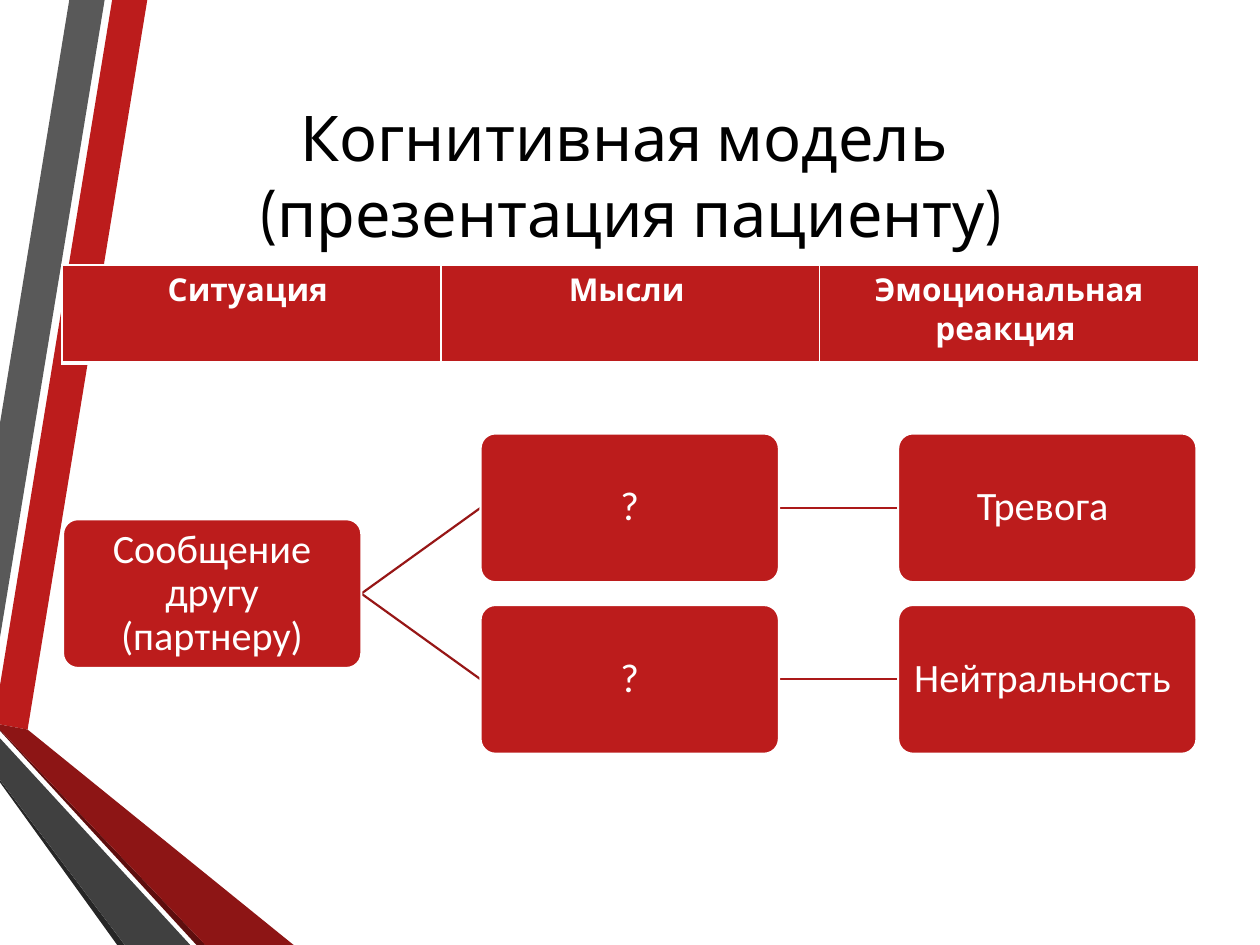
from lxml import etree
from pptx import Presentation
from pptx.dml.color import RGBColor
from pptx.enum import shapes, text
from pptx.oxml.ns import qn
from pptx.util import Pt

RED, WHITE = "BC1C1C", "FFFFFF"
TITLE = "Когнитивная модель \v(презентация пациенту)"
HEADINGS = ["Ситуация\u00a0", "Мысли\u00a0", "Эмоциональная реакция\u00a0"]

# Diagram: key -> (text, column, row); links: from, to, colour
NODES = {
    "situation": ("Сообщение другу (партнеру)", 0, 0.5),
    "thought 1": ("?", 1, 0),
    "anxiety": ("Тревога\u00a0", 2, 0),
    "thought 2": ("?", 1, 1),
    "neutrality": ("Нейтральность\u00a0", 2, 1),
}
LINKS = [
    ("situation", "thought 1", "971616"),
    ("thought 1", "anxiety", "AB1919"),
    ("situation", "thought 2", "971616"),
    ("thought 2", "neutrality", "AB1919"),
]
NODE_W, NODE_H = 170.5, 85
LEFT, TOP, STEP_X, STEP_Y = 36, 247.7, 238.6, 98

# Decorative ribbons: colour, outline in points
RIBBONS = [
    (RED, [(0, 391.7), (0, 414), (15.8, 416.9), (84.2, 0), (64.1, 0)]),
    ("595959", [(59.8, 0), (39.6, 0), (0, 241.9), (0, 364.3)]),
    ("262626", [(0, 445.7), (0, 447.1), (67, 540), (71.3, 540)]),
    ("5E0E0E", [(0, 416.9), (0, 417.6), (112.3, 540), (117.4, 540)]),
    ("8D1515", [(0, 416.9), (117.4, 540), (167.8, 540), (15.8, 416.9), (0, 414)]),
    ("404040", [(0, 445.7), (71.3, 540), (108.7, 540), (0, 421.9)]),
]


def paint(target, color):
    """Give a fill, or the fill of a line, one solid colour."""
    target.solid()
    target.fore_color.rgb = RGBColor.from_string(color)


def write(frame, words, font, size, color, bold=False):
    frame.text = words
    for paragraph in frame.paragraphs:
        paragraph.alignment = text.PP_ALIGN.CENTER
        paragraph.font.name = font
        paragraph.font.size = Pt(size)
        paragraph.font.bold = bold
        paragraph.font.color.rgb = RGBColor.from_string(color)


def border(cell, side, width):
    edge = etree.SubElement(cell._tc.get_or_add_tcPr(), qn("a:" + side), w=str(Pt(width)))
    solid = etree.SubElement(edge, qn("a:solidFill"))
    etree.SubElement(solid, qn("a:srgbClr"), val=WHITE)


def corner(key):
    _, column, row = NODES[key]
    return LEFT + column * STEP_X, TOP + row * STEP_Y


prs = Presentation()
prs.slide_width, prs.slide_height = Pt(720), Pt(540)
slide = prs.slides.add_slide(prs.slide_layouts[5])
title = slide.shapes.title

# Ribbons, kept behind the title
for color, outline in RIBBONS:
    start, *rest = [(Pt(x), Pt(y)) for x, y in outline]
    builder = slide.shapes.build_freeform(*start)
    builder.add_line_segments(rest, close=True)
    ribbon = builder.convert_to_shape()
    ribbon.shadow.inherit = False
    paint(ribbon.fill, color)
    ribbon.line.fill.background()
    title._element.addprevious(ribbon._element)

# Title
title.left, title.top, title.width, title.height = Pt(92.9), Pt(48.2), Pt(535.7), Pt(103)
write(title.text_frame, TITLE, "Cabin", 36, "000000")
title.text_frame.vertical_anchor = text.MSO_ANCHOR.MIDDLE

# Links between the boxes
for origin, target, color in LINKS:
    (x1, y1), (x2, y2) = corner(origin), corner(target)
    link = slide.shapes.add_connector(
        shapes.MSO_CONNECTOR.STRAIGHT,
        Pt(x1 + NODE_W), Pt(y1 + NODE_H / 2), Pt(x2), Pt(y2 + NODE_H / 2))
    paint(link.line.fill, color)
    link.line.width = Pt(1.25)
    etree.SubElement(link._element.spPr, qn("a:effectLst"))

# Boxes
for key, (words, _, _) in NODES.items():
    x, y = corner(key)
    node = slide.shapes.add_shape(
        shapes.MSO_SHAPE.ROUNDED_RECTANGLE, Pt(x), Pt(y), Pt(NODE_W), Pt(NODE_H))
    node.adjustments[0] = 0.1
    node.shadow.inherit = False
    paint(node.fill, RED)
    paint(node.line.fill, WHITE)
    node.line.width = Pt(1.25)
    frame = node.text_frame
    frame.margin_left = frame.margin_right = frame.margin_top = frame.margin_bottom = Pt(1.5)
    frame.word_wrap = True
    frame.vertical_anchor = text.MSO_ANCHOR.MIDDLE
    write(frame, words, "Calibri", 23, WHITE)
    frame.paragraphs[0].line_spacing = 0.9

# Column headings
table = slide.shapes.add_table(
    1, len(HEADINGS), Pt(35.4), Pt(151.4), Pt(649.5), Pt(56)).table
for cell, words in zip(table.rows[0].cells, HEADINGS):
    write(cell.text_frame, words, "Cabin", 18, WHITE, bold=True)
    for side, width in [("lnL", 1), ("lnR", 1), ("lnT", 1), ("lnB", 3)]:
        border(cell, side, width)
    paint(cell.fill, RED)

prs.save("out.pptx")
